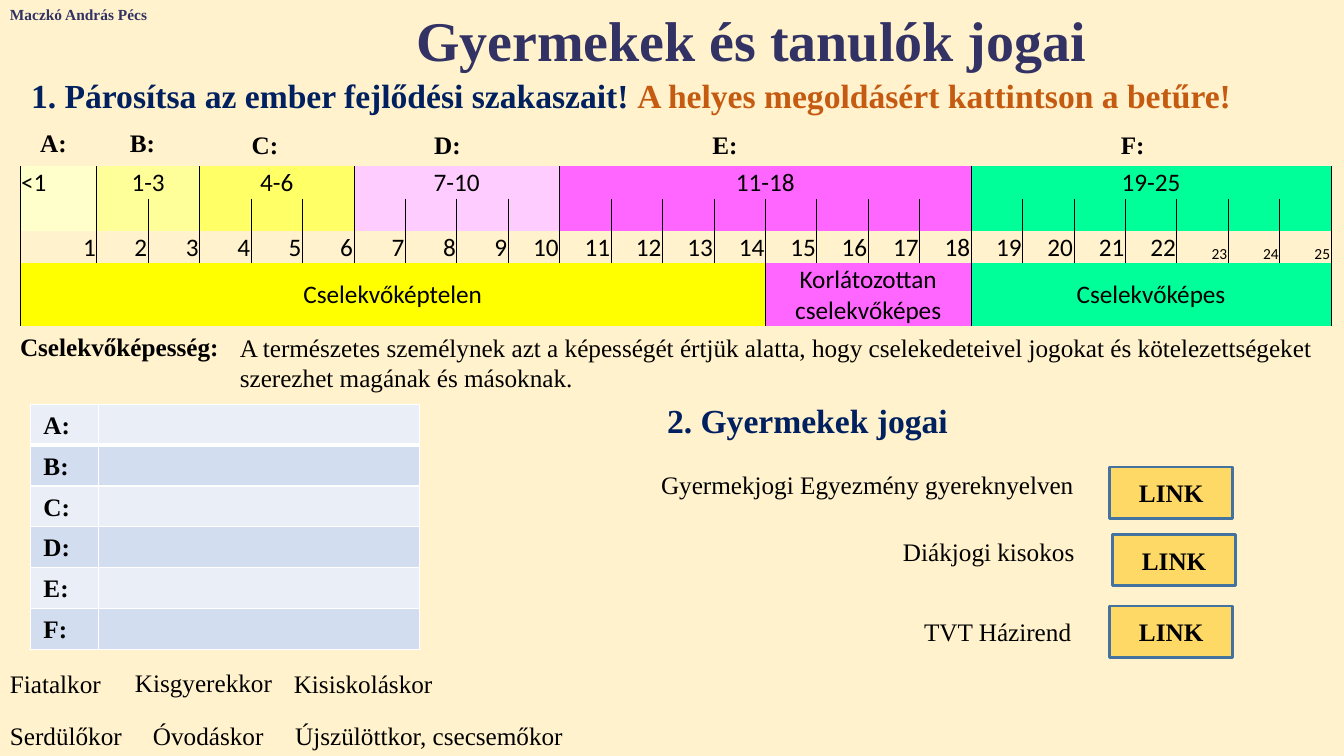
from lxml import etree
from pptx import Presentation
from pptx import util as u
from pptx.dml.color import RGBColor
from pptx.enum import shapes, text
from pptx.oxml.ns import qn

SERIF, SANS = "Times New Roman", "Calibri"
BLACK, WHITE, NAVY, INDIGO, ORANGE = "000000", "FFFFFF", "002060", "323264", "C55A11"
LEFT, CENTER, RIGHT = text.PP_ALIGN.LEFT, text.PP_ALIGN.CENTER, text.PP_ALIGN.RIGHT
NO_STYLE = "{2D5ABB26-0587-4C30-8999-92F81FD0307C}"

TITLE = ("Gyermekek és tanulók jogai", (112.3, 0, 848.2, 55.7))
AUTHOR = ("Maczkó András Pécs", (0, 0, 114.5, 20.6))
TASK = [("1. Párosítsa az ember fejlődési szakaszait! ", NAVY),
        ("A helyes megoldásért kattintson a betűre!", ORANGE)]
RIGHTS_HEADING = "2. Gyermekek jogai"

# Label, number of years, fill
STAGES = [("<1", 1, "FFFFCC"), ("1-3", 2, "FFFF99"), ("4-6", 3, "FFFF66"),
          ("7-10", 4, "FFCCFF"), ("11-18", 8, "FF66FF"), ("19-25", 7, "00FF99")]
CAPACITIES = [("Cselekvőképtelen", 14, "FFFF00"),
              ("Korlátozottan\vcselekvőképes", 4, "FF66FF"),
              ("Cselekvőképes", 7, "00FF99")]
YEARS = 25
FIRST_SMALL_YEAR = 23

LETTERS = ["A:", "B:", "C:", "D:", "E:", "F:"]
STAGE_LETTER_PLACES = [(21.6, 87.3), (85.7, 87.5), (172.7, 89),
                       (303.1, 88.6), (501.8, 89), (793.5, 88.6)]
CAPACITY_TERM = ("Cselekvőképesség:", (7.2, 232.8, 157.7, 29.1))
CAPACITY_MEANING = (
    "A természetes személynek azt a képességét értjük alatta, hogy cselekedeteivel "
    "jogokat és kötelezettségeket szerezhet magának és másoknak.",
    (164.2, 233.7, 795.6, 50.9))
ANSWERS = [("Újszülöttkor, csecsemőkor", 203.8, 511, 211),
           ("Kisgyerekkor", 89.3, 473.2, 117.4), ("Óvodáskor", 102.2, 511, 97.9),
           ("Kisiskoláskor", 202.8, 473.8, 116.6), ("Serdülőkor", 0, 511, 99.4),
           ("Fiatalkor", 0, 473.8, 83.5)]
# Document, its text box, left and top of its button
DOCUMENTS = [
    ("Gyermekjogi Egyezmény gyereknyelven", (465.1, 331.7, 312.5, 29.1), (792.6, 333.6)),
    ("Diákjogi kisokos", (637.9, 379.6, 138.2, 29.1), (794.7, 381.7)),
    ("TVT Házirend", (653, 437, 121, 29.1), (792.6, 432.8))]


def color(value):
    return RGBColor.from_string(value)


def style(paragraph, size=18, bold=False, hue=BLACK, name=SERIF, align=LEFT):
    paragraph.alignment = align
    font = paragraph.font
    font.size, font.bold, font.name = u.Pt(size), bold, name
    if hue:
        font.color.rgb = color(hue)


def place(box):
    return [u.Pt(value) for value in box]


def add_text(content, box, wrap=True, **look):
    frame = slide.shapes.add_textbox(*place(box)).text_frame
    frame.word_wrap = wrap
    frame.auto_size = text.MSO_AUTO_SIZE.SHAPE_TO_FIT_TEXT
    frame.text = content
    style(frame.paragraphs[0], **look)


def add_plain_table(rows, widths, heights, left, top):
    """Add a table without style, and set its column widths and row heights."""
    frame = slide.shapes.add_table(rows, len(widths),
                                   *place((left, top, sum(widths), sum(heights))))
    table = frame.table
    table.first_row = table.horz_banding = False
    table._tbl.tblPr.find(qn("a:tableStyleId")).text = NO_STYLE
    for column, width in zip(table.columns, widths):
        column.width = u.Pt(width)
    for row, height in zip(table.rows, heights):
        row.height = u.Pt(height)
    return table


def set_borders(cell, hue, widths):
    """Draw the named sides (L, R, T, B) of a cell with the given widths."""
    properties = cell._tc.get_or_add_tcPr()
    for side, width in widths.items():
        line = etree.SubElement(properties, qn("a:ln" + side), w=str(int(u.Pt(width))))
        fill = etree.SubElement(line, qn("a:solidFill"))
        etree.SubElement(fill, qn("a:srgbClr"), val=hue)


def fill_cell(cell, hue):
    cell.fill.solid()
    cell.fill.fore_color.rgb = color(hue)


def add_band(table, row, groups, anchor):
    """Write groups of years into one row, each merged over its columns."""
    start = 0
    for label, years, hue in groups:
        cell = table.cell(row, start)
        if years > 1:
            cell.merge(table.cell(row, start + years - 1))
        cell.text = label
        cell.vertical_anchor = anchor
        style(cell.text_frame.paragraphs[0], name=SANS,
              align=CENTER if years > 1 else LEFT)
        for column in range(start, start + years):
            fill_cell(table.cell(row, column), hue)
        start += years


def add_timeline():
    table = add_plain_table(4, [54.7] + [36.75] * (YEARS - 1),
                            [23.1, 23.1, 23.1, 44.9], 14.4, 118.8)
    for cell in table.iter_cells():
        cell.margin_left = cell.margin_right = cell.margin_top = u.Pt(0.7)
        cell.margin_bottom = 0
        cell.text_frame.paragraphs[0].font.size = u.Pt(12)
        set_borders(cell, BLACK, {"L": 0.5, "R": 0.5})
    add_band(table, 0, STAGES, text.MSO_ANCHOR.BOTTOM)
    add_band(table, 3, CAPACITIES, text.MSO_ANCHOR.MIDDLE)
    year_fills = [hue for _, years, hue in STAGES for _ in range(years)]
    for column, hue in enumerate(year_fills):
        fill_cell(table.cell(1, column), hue)
        cell, year = table.cell(2, column), column + 1
        cell.text = str(year)
        cell.vertical_anchor = text.MSO_ANCHOR.BOTTOM
        style(cell.text_frame.paragraphs[0], size=11 if year >= FIRST_SMALL_YEAR else 18,
              name=SANS, align=RIGHT)


def add_answer_table():
    pitch, top = 29.2, 288.7
    table = add_plain_table(len(LETTERS), [48.8, 229.2], [pitch] * len(LETTERS), 21.8, top)
    for row, letter in enumerate(LETTERS):
        for column in range(2):
            cell = table.cell(row, column)
            cell.margin_top = cell.margin_bottom = 0
            set_borders(cell, WHITE, {"L": 1, "R": 1, "T": 3 if row == 1 else 1,
                                      "B": 3 if row == 0 else 1})
            fill_cell(cell, "D2DEEF" if row % 2 else "EAEFF7")
        add_text(letter, (24, top + row * pitch, 38.2, 29.1), bold=True)


def add_button(left, top):
    button = slide.shapes.add_shape(shapes.MSO_SHAPE.RECTANGLE,
                                    *place((left, top, 88, 36.6)))
    button.shadow.inherit = False
    button.fill.solid()
    button.fill.fore_color.rgb = color("FFD966")
    button.line.color.rgb = color("43739E")
    button.line.width = u.Pt(2)
    frame = button.text_frame
    frame.text = "LINK"
    frame.vertical_anchor = text.MSO_ANCHOR.MIDDLE
    style(frame.paragraphs[0], bold=True, align=CENTER)


presentation = Presentation()
presentation.slide_width, presentation.slide_height = u.Pt(960), u.Pt(540)
slide = presentation.slides.add_slide(presentation.slide_layouts[5])
slide.background.fill.solid()
slide.background.fill.fore_color.rgb = color("FFF2CC")

title = slide.shapes.title
title.left, title.top, title.width, title.height = place(TITLE[1])
title.text_frame.text = TITLE[0]
title.text_frame.auto_size = text.MSO_AUTO_SIZE.NONE
style(title.text_frame.paragraphs[0], size=40, bold=True, hue=INDIGO, align=CENTER)

add_text(*AUTHOR, size=11, bold=True, hue=INDIGO)
task_frame = slide.shapes.add_textbox(*place((15.1, 49.7, 936, 36.4))).text_frame
task_frame.word_wrap = True
for words, hue in TASK:
    run = task_frame.paragraphs[0].add_run()
    run.text = words
    run.font.color.rgb = color(hue)
style(task_frame.paragraphs[0], size=24, bold=True, hue=None)

add_timeline()
for letter, (left, top) in zip(LETTERS, STAGE_LETTER_PLACES):
    add_text(letter, (left, top, 38.2, 29.1), bold=True)
add_text(*CAPACITY_TERM, wrap=False, bold=True)
add_text(*CAPACITY_MEANING)
add_answer_table()
for answer, left, top, width in ANSWERS:
    add_text(answer, (left, top, width, 29.1))

add_text(RIGHTS_HEADING, (469.4, 282.2, 270.7, 36.4), size=24, bold=True, hue=NAVY)
for document, box, button_place in DOCUMENTS:
    add_text(document, box, wrap=False)
    add_button(*button_place)

presentation.save("out.pptx")
